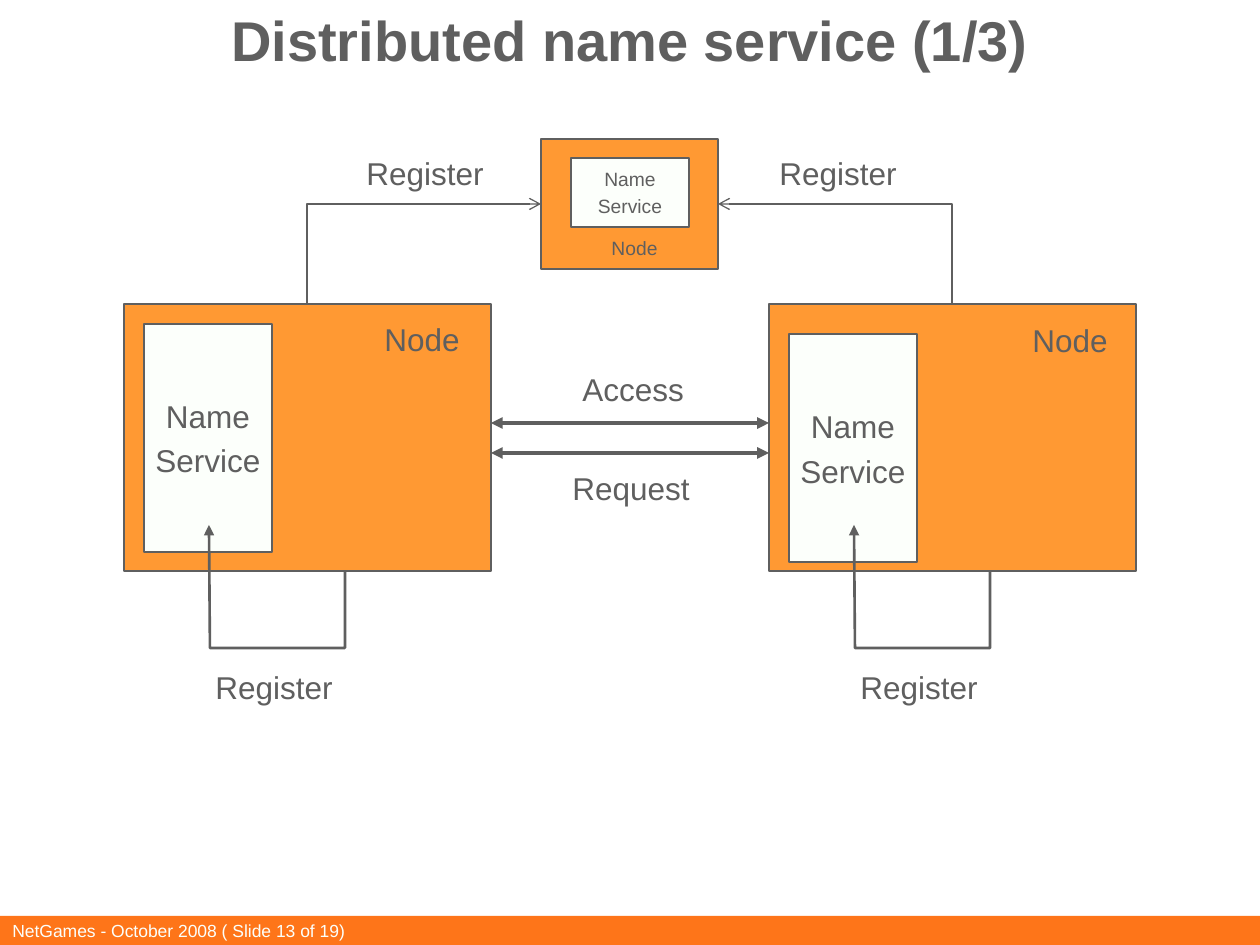
from pptx import Presentation
from pptx.dml.color import RGBColor
from pptx.enum.shapes import MSO_CONNECTOR, MSO_SHAPE
from pptx.enum.text import MSO_ANCHOR, PP_ALIGN
from pptx.oxml.ns import qn
from pptx.util import Pt
from lxml import etree

RECTANGLE = MSO_SHAPE.RECTANGLE
STRAIGHT = MSO_CONNECTOR.STRAIGHT
TOP, MIDDLE = MSO_ANCHOR.TOP, MSO_ANCHOR.MIDDLE
LEFT, CENTER = PP_ALIGN.LEFT, PP_ALIGN.CENTER
PX = 914400 / 126
color = RGBColor.from_string
GRAY, ORANGE, PALE, BAR = "5F5F5F", "FF9933", "FCFFFB", "FE7519"

deck = Presentation()
deck.slide_width, deck.slide_height = round(1260 * PX), round(945 * PX)
page = deck.slides.add_slide(deck.slide_layouts[6])
shapes = page.shapes


def write(box, text, size, anchor=TOP, align=LEFT, ink=GRAY, wrap=False):
    frame = box.text_frame
    frame.text = text
    frame.word_wrap = wrap
    frame.vertical_anchor = anchor
    for index, para in enumerate(frame.paragraphs):
        para.alignment = align
        if index:
            para.space_before = Pt(round(size * 0.23, 1))
        for span in para.runs:
            span.font.name = "Arial"
            span.font.size = Pt(size)
            span.font.color.rgb = color(ink)


def draw_arrow(arrow, width, **ends):
    arrow.line.color.rgb = color(GRAY)
    arrow.line.width = Pt(width)
    properties = arrow._element.spPr
    outline = properties.find(qn("a:ln"))
    for end, kind in ends.items():
        etree.SubElement(outline, qn("a:" + end)).set("type", kind)
    etree.SubElement(properties, qn("a:effectLst"))


# Footer bar and title
bar = shapes.add_shape(RECTANGLE, *[round(v * PX) for v in (0, 916, 1260, 29)])
bar.shadow.inherit = False
bar.fill.solid()
bar.fill.fore_color.rgb = color(BAR)
bar.line.fill.background()

footer = shapes.add_textbox(*[round(v * PX) for v in (0, 916, 393, 29)])
write(footer, "NetGames - October 2008 ( Slide 13 of 19)", 10, MIDDLE, ink=PALE, wrap=True)

title = shapes.add_textbox(*[round(v * PX) for v in (0, 0, 1260, 88)])
write(title, "Distributed name service (1/3)", 32, MIDDLE, CENTER, wrap=True)
title.text_frame.paragraphs[0].line_spacing = 0.85
title.text_frame.paragraphs[0].runs[0].font.bold = True

# Nodes with their name services
for place, fill, text, size in [
    ((124, 304, 367, 267), ORANGE, "", 18),
    ((144, 324, 128, 228), PALE, "Name\nService", 18),
    ((769, 304, 367, 267), ORANGE, "", 18),
    ((789, 334, 128, 228), PALE, "Name\nService", 18),
    ((541, 139, 177, 130), ORANGE, "", 11),
    ((571, 158, 118, 69), PALE, "Name\nService", 11),
]:
    block = shapes.add_shape(RECTANGLE, *[round(v * PX) for v in place])
    block.shadow.inherit = False
    block.fill.solid()
    block.fill.fore_color.rgb = color(fill)
    block.line.color.rgb = color(GRAY)
    block.line.width = Pt(0.75)
    if text:
        write(block, text, size, MIDDLE, CENTER)

# Register paths: loops inside each node, bends up to the top node
for points, width, tip in [
    ([(345, 571), (345, 648), (210, 648), (209, 525)], 1.5, "triangle"),
    ([(990, 571), (990, 648), (855, 648), (854, 525)], 1.5, "triangle"),
    ([(307, 304), (307, 204), (541, 204)], 0.75, "arrow"),
    ([(952, 304), (952, 204), (718, 204)], 0.75, "arrow"),
]:
    builder = shapes.build_freeform(*points[0], scale=PX)
    builder.add_line_segments(points[1:], close=False)
    route = builder.convert_to_shape()
    route.fill.background()
    draw_arrow(route, width, tailEnd=tip)

# Access and request arrows between the nodes
for y in (423, 453):
    link = shapes.add_connector(STRAIGHT, *[round(v * PX) for v in (491, y, 769, y)])
    draw_arrow(link, 2.25, headEnd="triangle", tailEnd="triangle")

# Labels
for text, left, top, width, height, size in [
    ("Register", 203, 662, 144, 50, 18),
    ("Register", 848, 662, 144, 50, 18),
    ("Register", 354, 148, 144, 50, 18),
    ("Register", 767, 148, 144, 50, 18),
    ("Node", 372, 314, 102, 50, 18),
    ("Node", 1020, 315, 102, 50, 18),
    ("Node", 599, 230, 72, 36, 11),
    ("Access", 570, 364, 129, 50, 18),
    ("Request", 560, 463, 144, 50, 18),
]:
    label = shapes.add_textbox(*[round(v * PX) for v in (left, top, width, height)])
    write(label, text, size)

deck.save("out.pptx")
